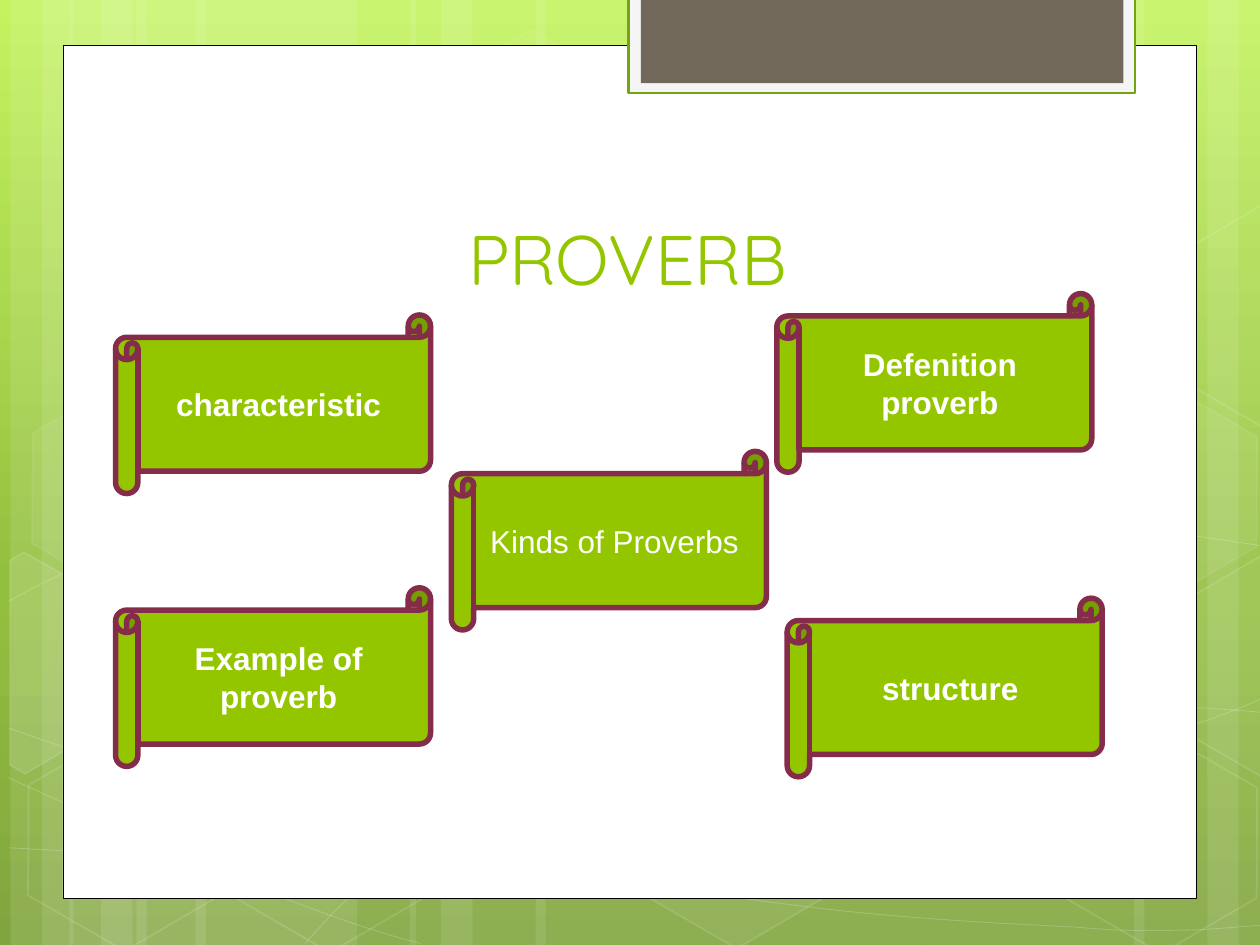
from copy import deepcopy
from typing import NamedTuple

from pptx import Presentation
from pptx.dml.color import RGBColor
from pptx.enum.shapes import MSO_SHAPE
from pptx.enum.text import MSO_ANCHOR, PP_ALIGN
from pptx.oxml.xmlchemy import OxmlElement
from pptx.util import Cm, Pt

RECTANGLE = MSO_SHAPE.RECTANGLE
HEXAGON = MSO_SHAPE.HEXAGON
SCROLL = MSO_SHAPE.HORIZONTAL_SCROLL
CENTER = PP_ALIGN.CENTER
MIDDLE = MSO_ANCHOR.MIDDLE
BOTTOM = MSO_ANCHOR.BOTTOM

WHITE = RGBColor(0xFF, 0xFF, 0xFF)
BLACK = RGBColor(0x00, 0x00, 0x00)
LIME = RGBColor(0x94, 0xC6, 0x00)
PLUM = RGBColor(0x86, 0x2C, 0x4B)
OLIVE = RGBColor(0x74, 0xA5, 0x10)
PALE = RGBColor(0xF5, 0xF5, 0xF5)
TAUPE = RGBColor(0x71, 0x68, 0x5A)
BACKDROP = (
    (0, RGBColor(0xC3, 0xF3, 0x5F)),
    (0.62, RGBColor(0x93, 0xBF, 0x3F)),
    (1, RGBColor(0x81, 0xA5, 0x3E)),
)

PAGE_WIDTH, PAGE_HEIGHT = 25.4, 19.05

Point = tuple[float, float]


class Area(NamedTuple):
    left: float
    top: float
    width: float
    height: float


class Paint(NamedTuple):
    fill: RGBColor | None = None
    line: RGBColor | None = None
    weight: float = 1
    fill_alpha: int = 100
    line_alpha: int = 100


class Hexagon(NamedTuple):
    left: float
    top: float
    fill_alpha: int
    line_alpha: int


class CutHexagon(NamedTuple):
    fill_alpha: int
    corners: list[Point]


class Scroll(NamedTuple):
    left: float
    top: float
    label: str
    bold: bool = True


BANDS = [
    (2.75, 4.45), (0.21, 1.27), (0.85, 2.11), (3.94, 4.45), (1.4, 1.27), (2.04, 2.11),
    (18.62, 4.45), (24.34, 1.27), (22.86, 2.11), (10.8, 7.82), (8.26, 1.27), (8.89, 2.11),
]
CURVES = [
    [(0.18, 17.09), (1.55, 17.17), (2.92, 17.25), (4.83, 17.22), (6.73, 17.2),
     (9.09, 17.15), (11.63, 16.89), (14.17, 16.64), (17.78, 16.15), (20.12, 15.67),
     (22.43, 15.19), (24.82, 14.43), (25.58, 14)],
    [(0.18, 12.12), (0.91, 11.71), (1.65, 11.33), (3.07, 10.95), (4.52, 10.57),
     (6.58, 10.01), (8.81, 9.83), (11.07, 9.65), (13.82, 9.63), (16.61, 9.83),
     (19.41, 10.03), (24.05, 10.82), (25.58, 11.02)],
    [(0.15, 15.67), (3.23, 17.07), (6.27, 18.47), (8.48, 19.02)],
    [(0.18, 14.68), (0.97, 14.96), (1.78, 15.24), (3.25, 15.65), (4.72, 16.03),
     (6.93, 16.66), (9.07, 17.09), (11.18, 17.53), (13.84, 17.98), (15.95, 18.24),
     (18.06, 18.52), (20.32, 18.62), (21.67, 18.69), (22.99, 18.8), (23.34, 18.75),
     (24, 18.75), (24.66, 18.72), (25.12, 18.67), (25.58, 18.64)],
    [(6.15, 19.02), (6.6, 18.52), (7.06, 18.01), (7.67, 17.55), (8.28, 17.09),
     (9.14, 16.59), (9.86, 16.23), (10.57, 15.88), (11, 15.72), (11.94, 15.47),
     (12.85, 15.21), (14.55, 14.86), (15.44, 14.68), (16.36, 14.5), (16.48, 14.5),
     (17.27, 14.45), (18.06, 14.38), (19.3, 14.3), (20.17, 14.27), (21.06, 14.25),
     (22.5, 14.27), (22.5, 14.27), (22.5, 14.27), (24.21, 14.27), (24.21, 14.27),
     (24.66, 14.3), (25.1, 14.33), (25.32, 14.35), (25.55, 14.38), (25.48, 14.35),
     (25.55, 14.38)],
]
HEXAGONS = [
    Hexagon(8.48, 0.91, 4, 8),
    Hexagon(12.62, 14.96, 6, 12),
    Hexagon(0.28, 15.01, 0, 12),
    Hexagon(0.36, 7.92, 7, 8),
    Hexagon(4.42, 15.04, 0, 12),
    Hexagon(19.13, 11.51, 10, 12),
    Hexagon(21.18, 15.06, 0, 12),
    Hexagon(21.18, 7.98, 7, 8),
]
CUT_HEXAGONS = [
    CutHexagon(10, [(0.2, 11.3), (0.48, 11.13), (2.44, 12.24),
                    (2.41, 14.48), (0.51, 15.6), (0.2, 15.42)]),
    CutHexagon(4, [(23.52, 12.32), (25.43, 11.2), (25.63, 11.33),
                   (25.63, 15.57), (25.45, 15.67), (23.52, 14.55)]),
    CutHexagon(0, [(23.52, 5.26), (25.43, 4.14), (25.65, 4.27),
                   (25.63, 8.51), (25.45, 8.61), (23.52, 7.49)]),
]
SCROLLS = [
    Scroll(2.33, 6.35, "characteristic"),
    Scroll(2.33, 11.85, "Example of proverb"),
    Scroll(15.66, 5.92, "Defenition proverb"),
    Scroll(15.87, 12.06, "structure"),
    Scroll(9.1, 9.1, "Kinds of Proverbs", False),
]


def set_alpha(shape, parent: str, percent: int) -> None:
    if percent < 100:
        color = shape.element.xpath(f"p:spPr/{parent}/a:srgbClr")[0]
        alpha = OxmlElement("a:alpha")
        alpha.set("val", str(percent * 1000))
        color.append(alpha)


def apply_paint(shape, paint: Paint) -> None:
    shape.shadow.inherit = False
    if paint.fill is None or paint.fill_alpha == 0:
        shape.fill.background()
    else:
        shape.fill.solid()
        shape.fill.fore_color.rgb = paint.fill
        set_alpha(shape, "a:solidFill", paint.fill_alpha)
    if paint.line is None:
        shape.line.fill.background()
    else:
        shape.line.color.rgb = paint.line
        shape.line.width = Pt(paint.weight)
        set_alpha(shape, "a:ln/a:solidFill", paint.line_alpha)


def draw_preset(page, preset, area: Area, paint: Paint):
    shape = page.shapes.add_shape(preset, *map(Cm, area))
    apply_paint(shape, paint)
    return shape


def draw_outline(page, points: list[Point], paint: Paint, close: bool):
    start, *rest = [(Cm(x), Cm(y)) for x, y in points]
    builder = page.shapes.build_freeform(*start)
    builder.add_line_segments(rest, close=close)
    shape = builder.convert_to_shape()
    apply_paint(shape, paint)
    return shape


def draw_curve(page, knots: list[Point]) -> None:
    shape = draw_outline(page, knots, Paint(line=WHITE, weight=0.5, line_alpha=20), False)
    outline = shape.element.xpath(".//a:path")[0]
    segments = outline.xpath("a:lnTo")
    for first in range(0, len(segments), 3):
        curve = OxmlElement("a:cubicBezTo")
        for segment in segments[first:first + 3]:
            curve.append(segment[0])
            outline.remove(segment)
        outline.append(curve)


def write_text(shape, text: str, font: str, size: int, color: RGBColor, bold: bool) -> None:
    shape.text_frame.word_wrap = True
    para = shape.text_frame.paragraphs[0]
    para.text = text
    para.alignment = CENTER
    para.font.name = font
    para.font.size = Pt(size)
    para.font.bold = bold
    para.font.color.rgb = color


def draw_backdrop(page) -> None:
    fill = page.background.fill
    fill.gradient()
    fill.gradient_angle = 270
    stop_list = page.element.xpath(".//a:gsLst")[0]
    stop_list.append(deepcopy(stop_list[0]))
    for stop, (position, color) in zip(fill.gradient_stops, BACKDROP):
        stop.position = position
        stop.color.rgb = color
    for left, width in BANDS:
        draw_preset(page, RECTANGLE, Area(left, 0, width, PAGE_HEIGHT), Paint(WHITE, fill_alpha=10))
    for knots in CURVES:
        draw_curve(page, knots)
    for item in HEXAGONS:
        paint = Paint(WHITE, WHITE, 1, item.fill_alpha, item.line_alpha)
        shape = draw_preset(page, HEXAGON, Area(item.left, item.top, 4.45, 3.86), paint)
        shape.adjustments[0] = 0.285
        shape.rotation = 30
    for cut in CUT_HEXAGONS:
        draw_outline(page, cut.corners, Paint(WHITE, WHITE, 1, cut.fill_alpha, 12), True)


def draw_title(page) -> None:
    box = page.shapes.add_textbox(Cm(2.9), Cm(2.86), Cm(19.51), Cm(3.18))
    frame = box.text_frame
    frame.vertical_anchor = BOTTOM
    frame.margin_left = frame.margin_right = Cm(0.13)
    frame.margin_top = frame.margin_bottom = Cm(0)
    write_text(box, "PROVERB", "Quicksand", 40, LIME, False)


def draw_scroll(page, scroll: Scroll) -> None:
    area = Area(scroll.left, scroll.top, 6.35, 3.6)
    shape = draw_preset(page, SCROLL, area, Paint(LIME, PLUM, 3.15))
    shape.text_frame.vertical_anchor = MIDDLE
    write_text(shape, scroll.label, "Arial", 18, WHITE, scroll.bold)


def main() -> None:
    deck = Presentation()
    deck.slide_width, deck.slide_height = Cm(PAGE_WIDTH), Cm(PAGE_HEIGHT)
    page = deck.slides.add_slide(deck.slide_layouts[6])
    draw_backdrop(page)
    draw_preset(page, RECTANGLE, Area(1.27, 0.92, 22.86, 17.19), Paint(WHITE, BLACK, 0.5))
    draw_preset(page, RECTANGLE, Area(12.67, -0.05, 10.21, 1.93), Paint(PALE, OLIVE, 1.25))
    draw_preset(page, RECTANGLE, Area(12.92, -0.05, 9.73, 1.73), Paint(TAUPE))
    draw_title(page)
    for scroll in SCROLLS:
        draw_scroll(page, scroll)
    deck.save("out.pptx")


if __name__ == "__main__":
    main()
